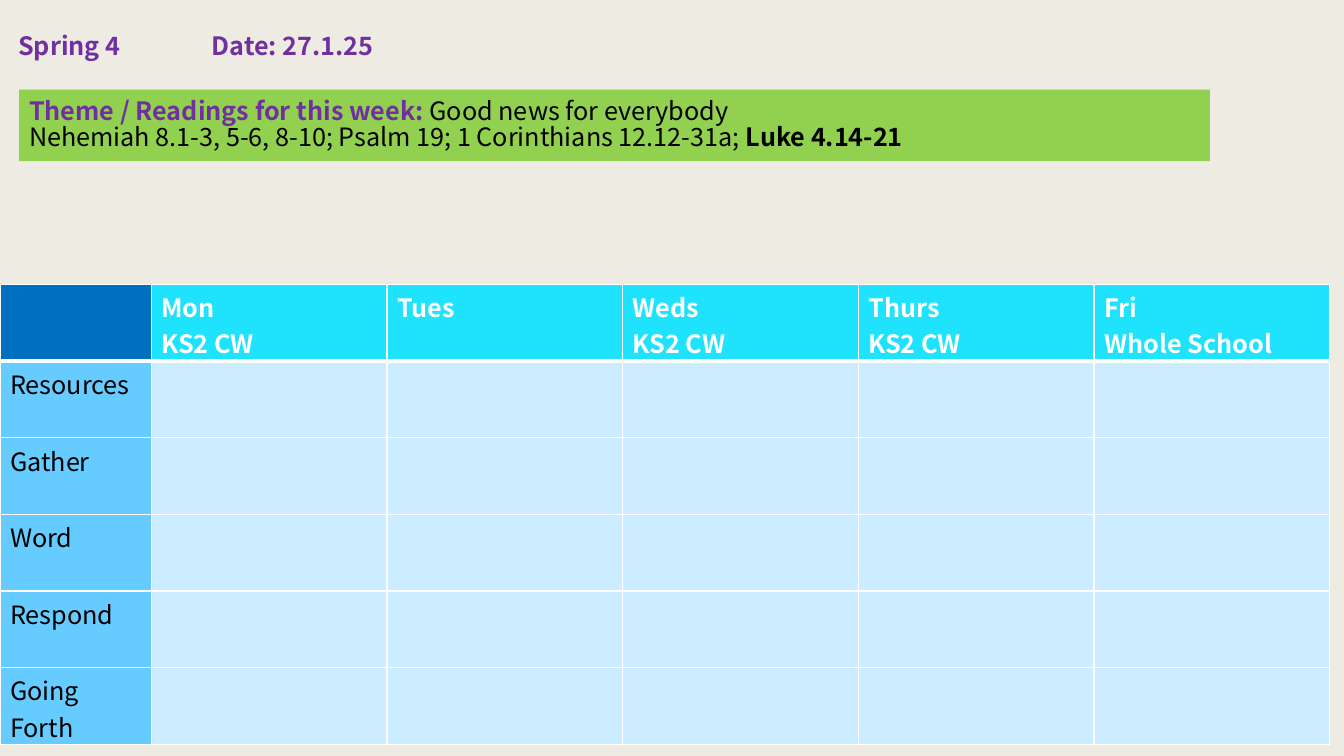
import pptx
import pptx.util
import pptx.dml.color
import pptx.enum.shapes
import pptx.enum.text
import pptx.oxml.ns
import lxml.etree

RGBColor = pptx.dml.color.RGBColor
Inches = pptx.util.Inches
Pt = pptx.util.Pt
qn = pptx.oxml.ns.qn

FONT = "Noto Sans CJK JP"
SIZE = 18
LINE_SPACING = 0.85
BACKGROUND = RGBColor(0xEE, 0xEB, 0xE2)
PURPLE = RGBColor(0x70, 0x30, 0xA0)
GREEN = RGBColor(0x92, 0xD0, 0x50)
BLACK = RGBColor(0, 0, 0)
WHITE = RGBColor(0xFF, 0xFF, 0xFF)
CORNER_BLUE = RGBColor(0x00, 0x70, 0xC0)
DAY_CYAN = RGBColor(0x1F, 0xE3, 0xFD)
STAGE_BLUE = RGBColor(0x66, 0xCC, 0xFF)
CELL_BLUE = RGBColor(0xCC, 0xEC, 0xFF)

DAYS = ["Mon\nKS2 CW", "Tues", "Weds\nKS2 CW", "Thurs\nKS2 CW", "Fri\nWhole School"]
STAGES = ["Resources", "Gather", "Word", "Respond", "Going Forth"]
THEME = [
    [("Theme / Readings for this week: ", PURPLE, True),
     ("Good news for everybody", BLACK, False)],
    [("Nehemiah 8.1-3, 5-6, 8-10; Psalm 19; 1 Corinthians 12.12-31a; ", BLACK, False),
     ("Luke 4.14-21", BLACK, True)],
]


def style_run(r, color, bold):
    r.font.name = FONT
    r.font.size = Pt(SIZE)
    r.font.bold = bold
    r.font.color.rgb = color


def format_frame(tf):
    tf.word_wrap = True
    tf.auto_size = pptx.enum.text.MSO_AUTO_SIZE.NONE
    tf.vertical_anchor = pptx.enum.text.MSO_ANCHOR.MIDDLE
    for p in tf.paragraphs:
        p.alignment = pptx.enum.text.PP_ALIGN.LEFT
        p.line_spacing = LINE_SPACING
        p.space_before = Pt(0)


def add_heading(s, left, top, width, height):
    sp = s.shapes.title
    sp.left, sp.top, sp.width, sp.height = map(Inches, (left, top, width, height))
    tf = sp.text_frame
    tf.text = "Spring 4\tDate: 27.1.25"
    format_frame(tf)
    p = tf.paragraphs[0]
    tabs = lxml.etree.SubElement(p._p.get_or_add_pPr(), qn("a:tabLst"))
    lxml.etree.SubElement(tabs, qn("a:tab"), pos=str(Inches(1.92)), algn="l")
    for r in p.runs:
        style_run(r, PURPLE, True)


def add_theme(s, left, top, width, height):
    sp = s.shapes.add_shape(pptx.enum.shapes.MSO_SHAPE.RECTANGLE,
                            *map(Inches, (left, top, width, height)))
    sp.shadow.inherit = False
    sp.fill.solid()
    sp.fill.fore_color.rgb = GREEN
    sp.line.fill.background()
    tf = sp.text_frame
    for i, line in enumerate(THEME):
        p = tf.add_paragraph() if i else tf.paragraphs[0]
        for text, color, bold in line:
            r = p.add_run()
            r.text = text
            style_run(r, color, bold)
    format_frame(tf)


def set_borders(cell, bottom):
    tcPr = cell._tc.get_or_add_tcPr()
    for i, (side, width) in enumerate((("L", 1), ("R", 1), ("T", 1), ("B", bottom))):
        ln = lxml.etree.Element(qn("a:ln" + side), w=str(Pt(width)))
        fill = lxml.etree.SubElement(ln, qn("a:solidFill"))
        lxml.etree.SubElement(fill, qn("a:srgbClr"), val=str(WHITE))
        tcPr.insert(i, ln)


def fill_cell(cell, text, fill, color, bold, bottom):
    cell.fill.solid()
    cell.fill.fore_color.rgb = fill
    cell.margin_top, cell.margin_bottom = Inches(0.04), 0
    set_borders(cell, bottom)
    cell.text_frame.text = text
    for p in cell.text_frame.paragraphs:
        p.font.size = Pt(SIZE)
        for r in p.runs:
            style_run(r, color, bold)


def add_timetable(s, left, top, width, height, stage_width):
    rows = [[""] + DAYS] + [[stage] + [""] * len(DAYS) for stage in STAGES]
    table = s.shapes.add_table(len(rows), len(rows[0]),
                               *map(Inches, (left, top, width, height))).table
    day_width = (width - stage_width) / len(DAYS)
    for j, column in enumerate(table.columns):
        column.width = Inches(day_width if j else stage_width)
    for i, row in enumerate(rows):
        table.rows[i].height = Inches(height / len(rows))
        for j, text in enumerate(row):
            if i == 0:
                fill = DAY_CYAN if j else CORNER_BLUE
            else:
                fill = CELL_BLUE if j else STAGE_BLUE
            fill_cell(table.cell(i, j), text, fill, BLACK if i else WHITE,
                      i == 0, 1 if i else 3)


def add_planner(prs):
    s = prs.slides.add_slide(prs.slide_layouts[5])
    s.background.fill.solid()
    s.background.fill.fore_color.rgb = BACKGROUND
    add_heading(s, 0.08, 0.27, 12.98, 0.4)
    add_theme(s, 0.19, 0.89, 11.81, 0.71)
    add_timetable(s, 0, 2.82, 13.19, 4.56, 1.5)


def main():
    prs = pptx.Presentation()
    prs.slide_width, prs.slide_height = Inches(13.33), Inches(7.5)
    add_planner(prs)
    prs.save("out.pptx")


if __name__ == "__main__":
    main()
